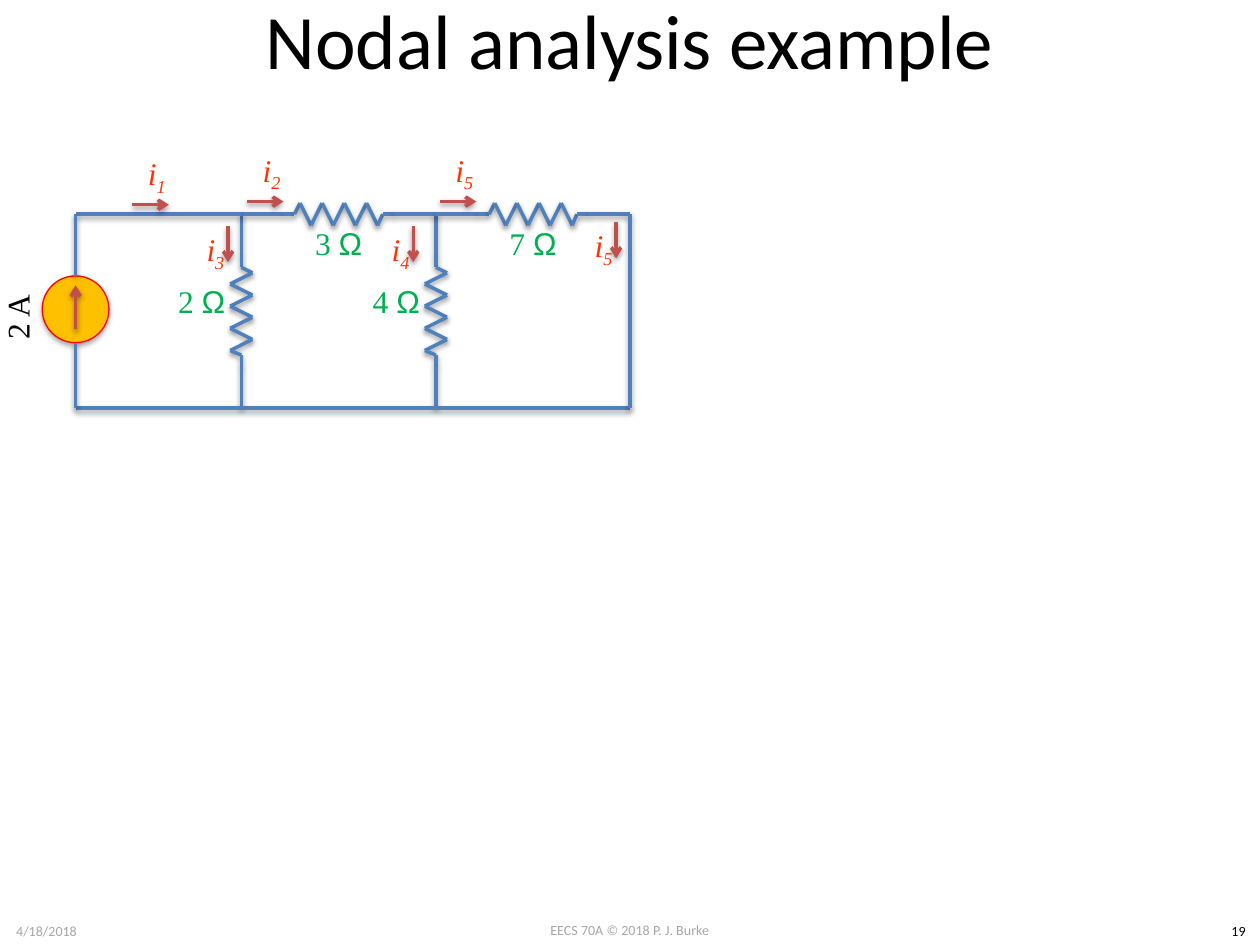
from itertools import pairwise

from lxml import etree
from pptx import Presentation
from pptx.dml.color import RGBColor
from pptx.enum.shapes import MSO_CONNECTOR, MSO_SHAPE
from pptx.enum.text import MSO_ANCHOR, PP_ALIGN
from pptx.oxml import parse_xml
from pptx.oxml.ns import nsdecls, qn
from pptx.util import Inches, Pt

STRAIGHT, ELLIPSE = MSO_CONNECTOR.STRAIGHT, MSO_SHAPE.OVAL
MIDDLE, CENTER = MSO_ANCHOR.MIDDLE, PP_ALIGN.CENTER
BLACK = RGBColor(0x00, 0x00, 0x00)
GRAY = RGBColor(0xA6, 0xA6, 0xA6)
BLUE = RGBColor(0x4F, 0x81, 0xBD)
BRICK = RGBColor(0xC0, 0x50, 0x4D)
GREEN = RGBColor(0x00, 0xB0, 0x50)
ORANGE = RGBColor(0xFF, 0x33, 0x00)
AMBER = RGBColor(0xFF, 0xC0, 0x00)
RED = RGBColor(0xFF, 0x00, 0x00)

CELL = 0.1
CIRCUIT_BOX = (6, 17, 44, 15.4)
TITLE_BOX = (5, -1.7, 90, 9.5)
FOOTER_BOX = (0, 72.6, 100, 2.4)
ARROW_LENGTH = 2.9

SMALL = {"name": "Calibri", "size": Pt(8)}
SERIF = {"name": "Times New Roman", "size": Pt(18)}
VALUE = SERIF | {"color": GREEN}
CURRENT = SERIF | {"color": ORANGE, "italic": True}


def cells(*counts):
    return [Inches(count * CELL) for count in counts]


def add_span(para, text, style, baseline=None):
    span = para.add_run()
    span.text = text
    for key, value in style.items():
        if key == "color":
            span.font.color.rgb = value
        else:
            setattr(span.font, key, value)
    if baseline:
        span._r.get_or_add_rPr().set("baseline", str(baseline))


def add_label(page, center, size, spans, rotation=0):
    (x, y), (width, height) = center, size
    box = page.shapes.add_textbox(*cells(x - width / 2, y - height / 2, width, height))
    box.rotation = rotation
    frame_format = {
        "word_wrap": True, "vertical_anchor": MIDDLE,
        "margin_left": 0, "margin_right": 0,
    }
    for key, value in frame_format.items():
        setattr(box.text_frame, key, value)
    para = box.text_frame.paragraphs[0]
    para.alignment = CENTER
    for span in spans:
        add_span(para, *span)


def cast_shadow(shape, opacity):
    shape._element.spPr.append(parse_xml(
        f'<a:effectLst {nsdecls("a")}><a:outerShdw blurRad="{Pt(3.1)}" '
        f'dist="{Pt(1.6)}" dir="5400000" rotWithShape="0">'
        f'<a:srgbClr val="000000"><a:alpha val="{opacity * 1000}"/></a:srgbClr>'
        '</a:outerShdw></a:effectLst>'))


def add_line(parent, start, end, color=BLUE, arrow=False):
    line = parent.shapes.add_connector(STRAIGHT, *cells(*start, *end))
    line.line.color.rgb = color
    line.line.width = Pt(2)
    if arrow:
        outline = line._element.spPr.find(qn("a:ln"))
        etree.SubElement(outline, qn("a:tailEnd")).set("type", "arrow")
    cast_shadow(line, 38)


def add_resistor(page, start, length, direction):
    (x, y), (across, down) = start, direction
    lead, stub, pitch, swing = 3.33, 0.89, 0.88, 0.88
    first_peak = lead + stub + pitch / 2
    peaks = [(first_peak + i * pitch, swing * (-1) ** i) for i in range(8)]
    profile = [
        (0, 0), (lead, 0), (lead + stub, 0), *peaks,
        (length - lead - stub, 0), (length - lead, 0), (length, 0),
    ]
    points = [
        (x + along * across + side * down, y + along * down - side * across)
        for along, side in profile
    ]
    group = page.shapes.add_group_shape()
    for point, following in pairwise(points):
        add_line(group, point, following)


def add_current(page, start, direction, subscript):
    (x, y), (across, down) = start, direction
    end = (x + ARROW_LENGTH * across, y + ARROW_LENGTH * down)
    add_line(page, start, end, BRICK, arrow=True)
    center = (x + 1.95 * across - down, y - 2.35 * across + 2.05 * down)
    add_label(page, center, (7.7, 6.1),
              [("i", CURRENT), (subscript, CURRENT, -25000)])


def add_source(page, box):
    left, top, width, height = box
    radius, middle = 2.65, top + 7.55
    circle = page.shapes.add_shape(
        ELLIPSE, *cells(left - radius, middle - radius, 2 * radius, 2 * radius))
    circle.fill.solid()
    circle.fill.fore_color.rgb = AMBER
    circle.line.color.rgb = RED
    circle.line.width = Pt(0.75)
    cast_shadow(circle, 35)
    add_line(page, (left, middle + 1.6), (left, middle - 1.9), BRICK, arrow=True)
    add_line(page, (left, middle - radius), (left, top))
    add_line(page, (left, middle + radius), (left, top + height))
    add_label(page, (left - 4.65, top + 8.15), (11.9, 7.3),
              [("2 A", SERIF | {"color": BLACK})], 270)


def add_circuit(page, box):
    left, top, width, height = box
    right, bottom = left + width, top + height
    first, second = left + 13.15, left + 28.6
    rightward, downward = (1, 0), (0, 1)

    for node, value in ((first, "2 "), (second, "4 ")):
        add_resistor(page, (node, top), height, downward)
        add_label(page, (node - 3.15, top + 6.85), (11.9, 7.3),
                  [(value, VALUE), ("Ω", VALUE | {"name": "Arial"})])
    for node, end, value in ((first, second, "3 "), (second, right, "7 ")):
        add_resistor(page, (node, top), end - node, rightward)
        add_label(page, ((node + end) / 2, top + 2.25), (11.9, 7.3),
                  [(value, VALUE), ("Ω", VALUE | {"name": "Arial"})])

    add_line(page, (first, top), (left, top))
    add_line(page, (left, bottom), (right, bottom))
    add_line(page, (right, top), (right, bottom))
    add_source(page, box)

    currents = (
        (4.5, -0.75, rightward, "1"), (13.6, -1, rightward, "2"),
        (28.9, -1, rightward, "5"), (12.1, 0.9, downward, "3"),
        (26.8, 0.9, downward, "4"), (42.9, 0.6, downward, "5"),
    )
    for column, row, direction, subscript in currents:
        add_current(page, (left + column, top + row), direction, subscript)


def add_title(page, box):
    title = page.shapes.title
    for key, value in zip(("left", "top", "width", "height"), cells(*box)):
        setattr(title, key, value)
    title.text_frame.vertical_anchor = MIDDLE
    para = title.text_frame.paragraphs[0]
    para.alignment = CENTER
    add_span(para, "Nodal analysis example",
             {"name": "Calibri", "size": Pt(44), "color": BLACK})


def add_footer(page, box):
    left, top, width, height = box
    middle = top + height / 2
    entries = (
        (0.5, 23.3, 0, "EECS 70A © 2018 P. J. Burke", GRAY),
        (0.037, 7.4, 0.1, "4/18/2018", GRAY),
        (0.983, 3.5, 0.1, "19", BLACK),
    )
    for share, size, drop, text, color in entries:
        add_label(page, (left + share * width, middle + drop), (size, height),
                  [(text, SMALL | {"color": color})])


def main():
    deck = Presentation()
    deck.slide_width, deck.slide_height = Inches(10), Inches(7.5)
    page = deck.slides.add_slide(deck.slide_layouts[5])
    add_footer(page, FOOTER_BOX)
    add_title(page, TITLE_BOX)
    add_circuit(page, CIRCUIT_BOX)
    deck.save("out.pptx")


if __name__ == "__main__":
    main()
